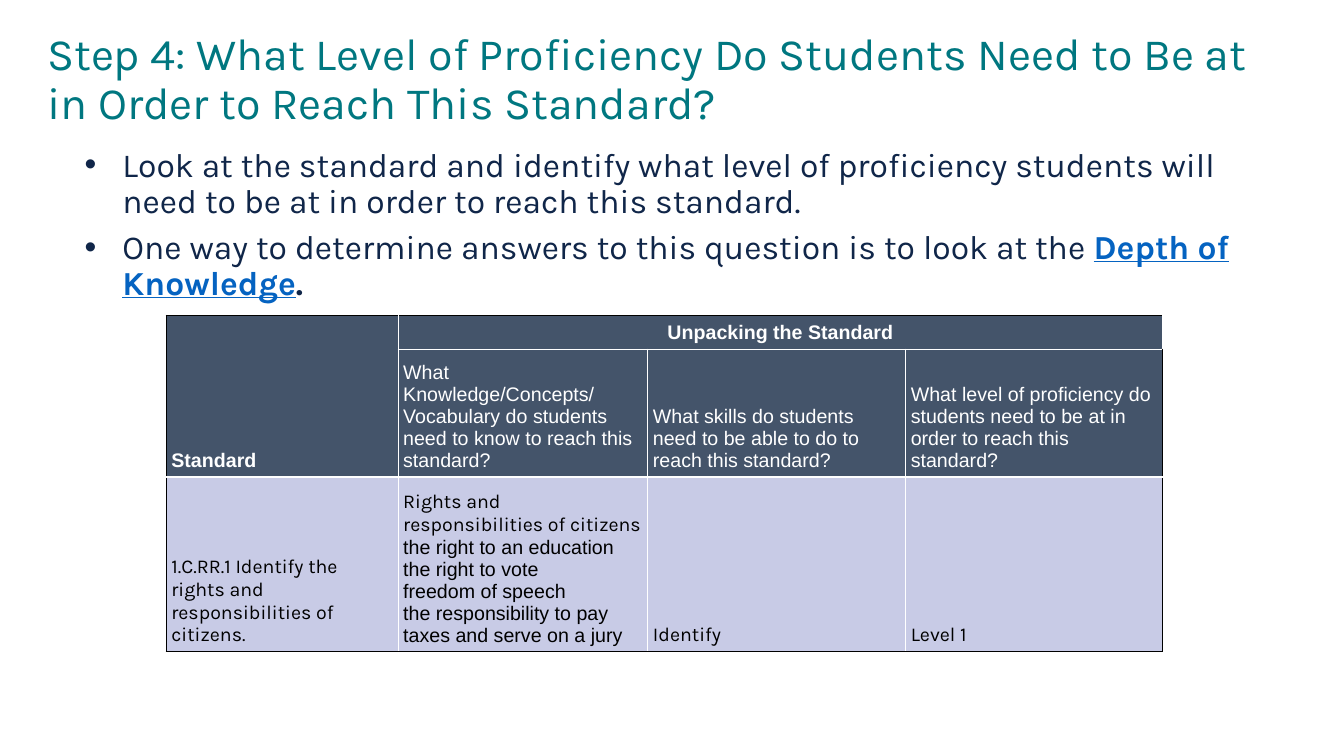
from lxml.etree import SubElement
from pptx import Presentation
from pptx.dml.color import RGBColor
from pptx.enum.text import MSO_ANCHOR as Anchor, PP_ALIGN as Align
from pptx.oxml.ns import qn
from pptx.util import Pt

TEAL, NAVY, LINK_BLUE = "007780", "102649", "0563C1"
SLATE, LAVENDER, WHITE, BLACK = "44546A", "C8CBE6", "FFFFFF", "000000"

BULLETS = [
    [("Look at the standard and identify what level of proficiency students will "
      "need to be at in order to reach this standard.", {})],
    [("One way to determine answers to this question is to look at the ", {}),
     ("Depth of Knowledge", dict(color=LINK_BLUE, bold=True, underline=True)),
     (".", dict(bold=True))],
]

# Each cell is a list of (text, font) lines; None is covered by a merged cell
TABLE_ROWS = [
    [[("Standard", "Arial")], [("Unpacking the Standard", "Arial")], None, None],
    [None,
     [("What Knowledge/Concepts/ Vocabulary do students need to know "
       "to reach this standard?", "Arial")],
     [("What skills do students need to be able to do to reach this standard?", "Arial")],
     [("What level of proficiency do students need to be at in order "
       "to reach this standard?", "Arial")]],
    [[("1.C.RR.1 Identify the rights and responsibilities of citizens.", "Karla")],
     [("Rights and responsibilities of citizens", "Karla"),
      ("the right to an education", "Arial"),
      ("the right to vote", "Arial"),
      ("freedom of speech", "Arial"),
      ("the responsibility to pay taxes and serve on a jury", "Arial")],
     [("Identify", "Karla")],
     [("Level 1", "Karla")]],
]
COLUMN_WIDTHS = [165.6, 178.4, 184.2, 183.6]
ROW_HEIGHTS = [22.5, 85.5, 118]


def rgb(color):
    return RGBColor.from_string(color)


def add_text(para, text, *, size, color, font="Karla", bold=False, underline=False):
    span = para.add_run()
    span.text = text
    span.font.name = font
    span.font.size = Pt(size)
    span.font.bold = bold
    span.font.underline = underline
    span.font.color.rgb = rgb(color)


def add_box(page, left, top, width, height, side_inset=0, top_inset=0):
    frame = page.shapes.add_textbox(Pt(left), Pt(top), Pt(width), Pt(height)).text_frame
    frame.word_wrap = True
    frame.vertical_anchor = Anchor.TOP
    frame.margin_left = frame.margin_right = Pt(side_inset)
    frame.margin_top = frame.margin_bottom = Pt(top_inset)
    return frame


def add_bullet(para, color, indent):
    props = para._p.get_or_add_pPr()
    props.set("marL", str(Pt(indent)))
    props.set("indent", str(-Pt(indent)))
    SubElement(SubElement(props, qn("a:buClr")), qn("a:srgbClr"), val=color)
    SubElement(props, qn("a:buFont"), typeface="Arial")
    SubElement(props, qn("a:buChar"), char="•")


def add_bullet_list(frame, items):
    for index, spans in enumerate(items):
        para = frame.add_paragraph() if index else frame.paragraphs[0]
        add_bullet(para, NAVY, 27)
        para.line_spacing = 0.9
        para.space_before = Pt(7 if index else 0)
        for text, style in spans:
            add_text(para, text, **{"size": 24, "color": NAVY, **style})


def set_borders(cell, colors):
    props = cell._tc.get_or_add_tcPr()
    for side, color in zip("LRTB", colors):
        line = SubElement(props, qn(f"a:ln{side}"), w=str(Pt(1)))
        SubElement(SubElement(line, qn("a:solidFill")), qn("a:srgbClr"), val=color)


def format_cell(cell, lines, fill, borders, text_color, bold, align):
    set_borders(cell, borders)
    cell.fill.solid()
    cell.fill.fore_color.rgb = rgb(fill)
    cell.margin_left = cell.margin_right = Pt(3.6)
    cell.margin_top = cell.margin_bottom = Pt(3.6)
    cell.vertical_anchor = Anchor.MIDDLE if align == Align.CENTER else Anchor.BOTTOM
    for index, (text, font) in enumerate(lines or []):
        para = cell.text_frame.add_paragraph() if index else cell.text_frame.paragraphs[0]
        para.alignment = align
        add_text(para, text, size=14, color=text_color, font=font, bold=bold)


def add_standards_table(page, left, top):
    row_count, column_count = len(ROW_HEIGHTS), len(COLUMN_WIDTHS)
    table = page.shapes.add_table(row_count, column_count, Pt(left), Pt(top),
                                  Pt(sum(COLUMN_WIDTHS)), Pt(sum(ROW_HEIGHTS))).table
    for column, width in zip(table.columns, COLUMN_WIDTHS):
        column.width = Pt(width)
    for row, height in zip(table.rows, ROW_HEIGHTS):
        row.height = Pt(height)
    table.cell(0, 0).merge(table.cell(1, 0))
    table.cell(0, 1).merge(table.cell(0, 3))

    for r, row in enumerate(TABLE_ROWS):
        is_header = r < 2
        for c, lines in enumerate(row):
            # Black around the table, white between cells
            outer = (c == 0, c == column_count - 1, r == 0, r == row_count - 1)
            format_cell(table.cell(r, c), lines,
                        fill=SLATE if is_header else LAVENDER,
                        borders=[BLACK if edge else WHITE for edge in outer],
                        text_color=WHITE if is_header else BLACK,
                        bold=r == 0,
                        align=Align.CENTER if (r, c) == (0, 1) else Align.LEFT)


def main():
    deck = Presentation()
    deck.slide_width, deck.slide_height = Pt(960), Pt(540)
    page = deck.slides.add_slide(deck.slide_layouts[6])

    # Title
    title = add_box(page, 26.6, 19.4, 895.7, 103.7, side_inset=7.2, top_inset=3.6)
    title.paragraphs[0].line_spacing = 0.9
    add_text(title.paragraphs[0], "Step 4: What Level of Proficiency Do Students Need "
             "to Be at in Order to Reach This Standard?", size=32, color=TEAL)

    # Bullets
    add_bullet_list(add_box(page, 60.5, 105.8, 828, 342.7), BULLETS)

    # Table
    add_standards_table(page, 118.8, 225.4)

    deck.save("out.pptx")


if __name__ == "__main__":
    main()
